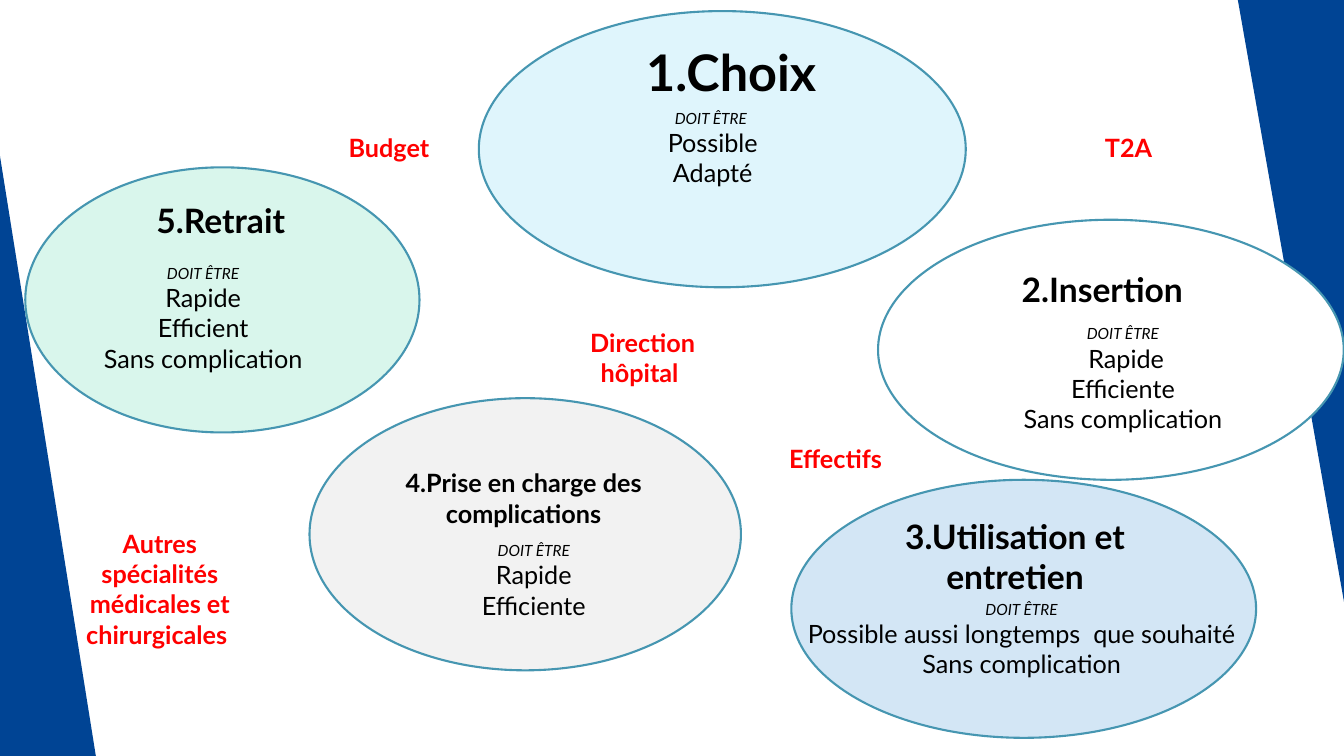
from lxml import etree
from pptx import Presentation, util as u
from pptx.dml.color import RGBColor
from pptx.enum import shapes, text

WIDTH, HEIGHT = u.Inches(13.333), u.Inches(7.5)
FONT = "Lato"
BLACK, RED, NAVY, TEAL = "000000", "FF0000", "004494", "4696B1"
MUST = "DOIT ÊTRE"

STAGES = [
    {"ellipse": (35.63, 1.47, 36.23, 36.53), "fill": "DFF5FC",
     "title": ["1.Choix "], "size": 36, "title_box": (45.3, 4.8, 19.13, 9.47),
     "goals": [MUST + " ", "Possible", "Adapté"],
     "goals_box": (47.33, 13.73, 11.4, 11.87)},
    {"ellipse": (65.33, 29.07, 34.65, 34.4), "fill": "FFFFFF",
     "title": ["2.Insertion"], "size": 24, "title_box": (72.45, 34.93, 19.13, 6.67),
     "goals": [MUST, " Rapide", "Efficiente", "Sans complication"],
     "goals_box": (74.18, 42.27, 18.75, 15.87)},
    {"ellipse": (58.88, 63.47, 34.58, 34.13), "fill": "D3E6F5",
     "title": ["3.Utilisation et entretien"], "size": 24,
     "title_box": (61.65, 67.6, 27.75, 6.67),
     "goals": [MUST, "Possible aussi longtemps  que souhaité", "Sans complication"],
     "goals_box": (59.1, 78.67, 33.83, 11.87)},
    {"ellipse": (23.03, 52.67, 32.1, 36), "fill": "F2F2F2",
     "title": ["4.Prise en charge des ", "complications "], "size": 18,
     "title_box": (23.1, 61.2, 32.18, 9.47),
     "goals": [MUST, "Rapide", "Efficiente"],
     "goals_box": (33.23, 70.93, 12.98, 11.87)},
    {"ellipse": (1.88, 22.13, 29.33, 35.07), "fill": "D9F6EC",
     "title": ["5.Retrait"], "size": 24, "title_box": (8.55, 25.73, 15.75, 6.67),
     "goals": [MUST, "Rapide", "Efficient", "Sans complication"],
     "goals_box": (4.95, 34.27, 20.33, 15.87)},
]

CONSTRAINTS = [
    ("Direction hôpital ", (40.58, 42.67, 14.48, 9.47), True),
    ("Autres spécialités médicales et chirurgicales ", (3.9, 69.2, 15.98, 17.47), True),
    ("T2A", (75.98, 16.8, 15.98, 5.33), True),
    ("Budget", (25.2, 16.8, 8.25, 5.33), False),
    ("Effectifs", (57.98, 58, 9.45, 5.33), False),
]


def color(value):
    return RGBColor.from_string(value)


def place(box):
    x, y, w, h = box
    return [int(share * full / 100)
            for share, full in ((x, WIDTH), (y, HEIGHT), (w, WIDTH), (h, HEIGHT))]


def add_figure(s, kind, box, fill, line=None):
    sp = s.shapes.add_shape(kind, *place(box))
    sp.shadow.inherit = False
    sp.fill.solid()
    sp.fill.fore_color.rgb = color(fill)
    if line:
        sp.line.color.rgb = color(line)
        sp.line.width = u.Pt(1.5)
    else:
        sp.line.fill.background()
    return sp


def add_text(s, box, lines, size, ink=BLACK, bold=False, wrap=True):
    tf = s.shapes.add_textbox(*place(box)).text_frame
    tf.word_wrap = wrap
    tf.auto_size = text.MSO_AUTO_SIZE.SHAPE_TO_FIT_TEXT
    tf.text = "\n".join(lines)
    for p in tf.paragraphs:
        p.alignment = text.PP_ALIGN.CENTER if wrap else text.PP_ALIGN.LEFT
        for r in p.runs:
            r.font.name = FONT
            r.font.size = u.Pt(size)
            r.font.bold = bold
            r.font.color.rgb = color(ink)
    return tf


def add_goals(s, box, goals):
    tf = add_text(s, box, goals, 18)
    lead = tf.paragraphs[0].runs[0].font
    lead.size = u.Pt(11)
    lead.italic = True


def add_corners(s):
    triangle = shapes.MSO_SHAPE.RIGHT_TRIANGLE
    add_figure(s, triangle, (0, 20.67, 7.13, 79.33), NAVY)
    add_figure(s, triangle, (92.1, 0, 7.9, 79.6), NAVY).rotation = 180


def main():
    prs = Presentation()
    prs.slide_width, prs.slide_height = WIDTH, HEIGHT
    s = prs.slides.add_slide(prs.slide_layouts[6])
    add_corners(s)
    for stage in STAGES:
        add_figure(s, shapes.MSO_SHAPE.OVAL, stage["ellipse"], stage["fill"], TEAL)
    for stage in STAGES:
        add_text(s, stage["title_box"], stage["title"], stage["size"], bold=True)
        add_goals(s, stage["goals_box"], stage["goals"])
    for label, box, wrap in CONSTRAINTS:
        add_text(s, box, [label], 18, RED, True, wrap)
    prs.save("out.pptx")


if __name__ == "__main__":
    main()
